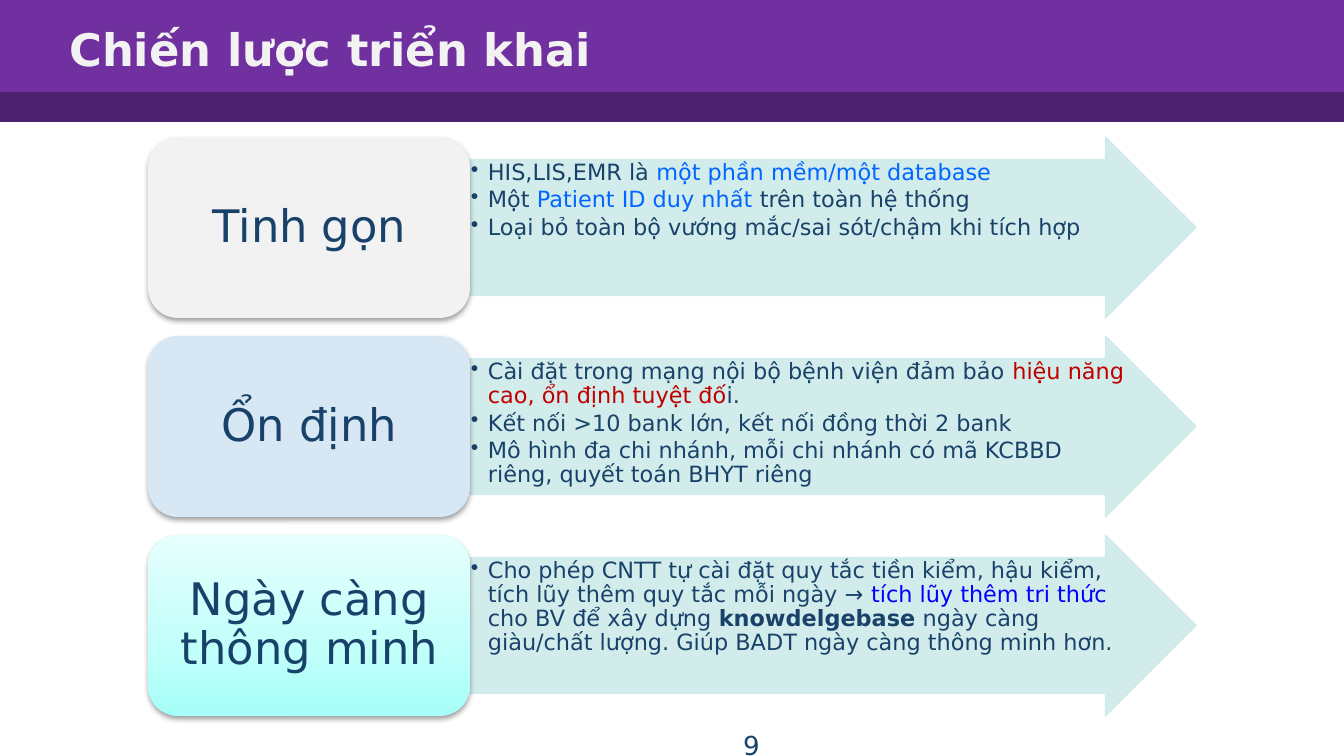
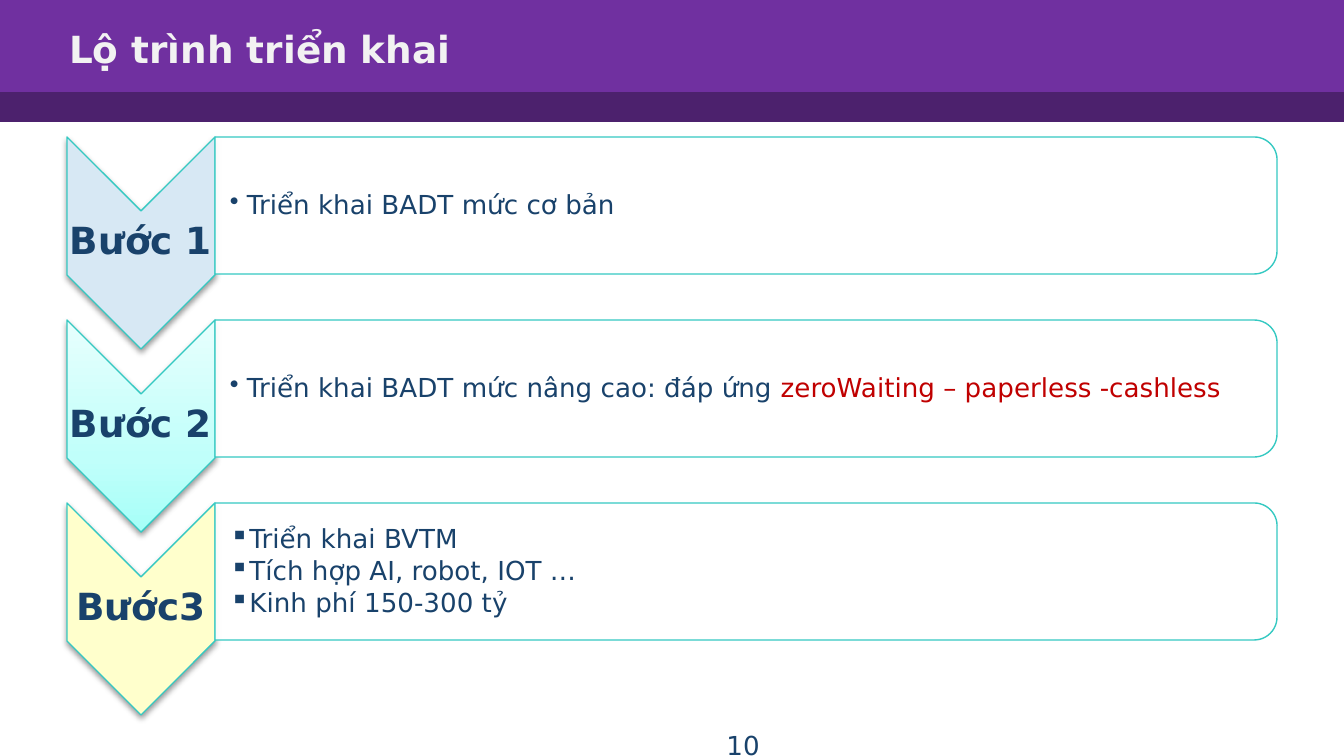
from lxml import etree
from pptx import Presentation
from pptx.dml.color import RGBColor
from pptx.enum.shapes import MSO_SHAPE as SHAPE
from pptx.enum.text import MSO_ANCHOR as ANCHOR, PP_ALIGN as ALIGN
from pptx.oxml import parse_xml
from pptx.oxml.ns import nsdecls, qn
from pptx.util import Pt

PX = 914400 / 134.4  # EMU in one px
FONT = "DejaVu Sans"
C = {
    "band": "7030A0", "band_dark": "4C216D", "title": "F2F2F2",
    "text": "19426B", "arrow": "CEEBE9", "teal": "35C9C2", "white": "FFFFFF",
    "grey": "F2F2F2", "sky": "D7E8F4", "cream": "FFFFCC",
    "azure": "0066FF", "blue": "0000FF", "red": "C00000",
}
AQUA = [(0, "A6FFF8"), (35, "C0FFFA"), (100, "E7FFFD")]  # gradient, bottom to top


def add_shape(s, kind, box, fill, line=None, fill_alpha=None, line_alpha=None,
              shadow=False, turned=False):
    """Draw a preset shape in the box it covers on the slide; turned means a quarter turn."""
    x, y, w, h = box
    if turned:
        x, y, w, h = x + (w - h) / 2, y + (h - w) / 2, h, w
    sp = s.shapes.add_shape(kind, *[round(v * PX) for v in (x, y, w, h)])
    sp.rotation = 90 if turned else 0
    if isinstance(fill, list):
        sp.fill.background()
        stops = "".join(f'<a:gs pos="{pos * 1000}"><a:srgbClr val="{color}"/></a:gs>'
                        for pos, color in fill)
        no_fill = sp._element.spPr.find(qn("a:noFill"))
        no_fill.getparent().replace(no_fill, parse_xml(
            f'<a:gradFill {nsdecls("a")} rotWithShape="0"><a:gsLst>{stops}</a:gsLst>'
            '<a:lin ang="16200000" scaled="0"/></a:gradFill>'))
    else:
        sp.fill.solid()
        sp.fill.fore_color.rgb = RGBColor.from_string(fill)
    if line:
        sp.line.color.rgb = RGBColor.from_string(line)
        sp.line.width = Pt(0.75)
    else:
        sp.line.fill.background()
    for tag, alpha in (("a:solidFill", fill_alpha), ("a:ln/a:solidFill", line_alpha)):
        if alpha:
            path = "/".join(qn(t) for t in f"{tag}/a:srgbClr".split("/"))
            color = sp._element.spPr.find(path)
            etree.SubElement(color, qn("a:alpha"), val=str(alpha * 1000))
    sp.shadow.inherit = False
    if shadow:
        sp._element.spPr.find(qn("a:effectLst")).append(parse_xml(
            f'<a:outerShdw {nsdecls("a")} blurRad="40000" dist="20000" dir="5400000" '
            'rotWithShape="0"><a:srgbClr val="000000"><a:alpha val="38000"/>'
            '</a:srgbClr></a:outerShdw>'))
    return sp


def add_text(s, box, paragraphs, size, color=C["text"], bold=False, align=ALIGN.LEFT,
             anchor=ANCHOR.MIDDLE, insets=None, bullet=None, spacing=None, after=0):
    """Each paragraph is a list of runs: (text, colour or None, bold or None)."""
    tf = s.shapes.add_textbox(*[round(v * PX) for v in box]).text_frame
    tf.word_wrap = True
    tf.vertical_anchor = anchor
    if insets:
        tf.margin_left, tf.margin_top, tf.margin_right, tf.margin_bottom = [
            round(v * PX) for v in insets]
    for i, runs in enumerate(paragraphs):
        p = tf.paragraphs[0] if i == 0 else tf.add_paragraph()
        p.alignment = align
        if spacing:
            p.line_spacing = spacing
            p.space_after = Pt(size * after)
        if bullet:
            p.level = 1
            pPr = p._p.get_or_add_pPr()
            indent = round(17 * PX)
            pPr.set("marL", str(indent))
            pPr.set("indent", str(-indent))
            etree.SubElement(pPr, qn("a:buChar"), char=bullet)
        for text, run_color, run_bold in runs:
            r = p.add_run()
            r.text = text
            r.font.name = FONT
            r.font.size = Pt(size)
            r.font.bold = bold if run_bold is None else run_bold
            r.font.color.rgb = RGBColor.from_string(run_color or color)


prs = Presentation()
prs.slide_width, prs.slide_height = round(1344 * PX), round(756 * PX)

# Bands, title and page number on both slides
slides = []
for title, title_size, number in (("Chiến lược triển khai", 24, "9"),
                                  ("Lộ trình triển khai", 20, "10")):
    s = prs.slides.add_slide(prs.slide_layouts[6])
    add_shape(s, SHAPE.RECTANGLE, (0, 87, 1344, 35), C["band_dark"])
    add_shape(s, SHAPE.RECTANGLE, (0, 0, 1344, 92), C["band"])
    add_text(s, (56, 18, 1086, 62), [[(title, None, None)]], title_size,
             color=C["title"], bold=True)
    add_text(s, (460, 723, 313, 26), [[(number, None, None)]], 14,
             align=ALIGN.RIGHT, anchor=ANCHOR.TOP)
    slides.append(s)
strategy, roadmap = slides

# Strategy: a label and an arrow of details in each row
goals = [
    ("Tinh gọn", C["grey"], [
        [("HIS,LIS,EMR là ", None, None),
         ("một phần mềm/một database", C["azure"], None)],
        [("Một ", None, None), ("Patient ID duy nhất ", C["azure"], None),
         ("trên toàn hệ thống", None, None)],
        [("Loại bỏ toàn bộ vướng mắc/sai sót/chậm khi tích hợp", None, None)],
    ]),
    ("Ổn định", C["sky"], [
        [("Cài đặt trong mạng nội bộ bệnh viện đảm bảo ", None, None),
         ("hiệu năng cao, ổn định tuyệt đố", C["red"], None), ("i.", None, None)],
        [("Kết nối >10 bank lớn, kết nối đồng thời 2 bank", None, None)],
        [("Mô hình đa chi nhánh, mỗi chi nhánh có mã KCBBD riêng, "
          "quyết toán BHYT riêng", None, None)],
    ]),
    ("Ngày càng thông minh", AQUA, [
        [("Cho phép CNTT tự cài đặt quy tắc tiền kiểm, hậu kiểm, "
          "tích lũy thêm quy tắc mỗi ngày → ", None, None),
         ("tích lũy thêm tri thức ", C["blue"], None),
         ("cho BV để xây dựng ", None, None), ("knowdelgebase", None, True),
         (" ngày càng giàu/chất lượng. Giúp BADT ngày càng thông minh hơn.", None, None)],
    ]),
]
for row, (label, fill, details) in enumerate(goals):
    y = 137 + row * 199
    arrow = add_shape(strategy, SHAPE.RIGHT_ARROW, (470, y, 726, 181), C["arrow"],
                      line=C["arrow"], fill_alpha=90, line_alpha=90)
    arrow.adjustments[0], arrow.adjustments[1] = 0.75, 0.5
    add_text(strategy, (470, y + 23, 659, 136), details, 12, anchor=ANCHOR.TOP,
             insets=(1, 1, 1, 1), bullet="•", spacing=0.9, after=0.15)
    add_shape(strategy, SHAPE.ROUNDED_RECTANGLE, (148, y, 322, 181), fill, shadow=True)
    add_text(strategy, (157, y + 9, 305, 163), [[(label, None, None)]], 24,
             align=ALIGN.CENTER, spacing=0.9, after=0.35)

# Roadmap: a chevron and a panel for each step
steps = [
    ("Bước 1", C["sky"], "•", [[("Triển khai BADT mức cơ bản", None, None)]]),
    ("Bước 2", AQUA, "•", [
        [("Triển khai BADT mức nâng cao: đáp ứng ", None, None),
         ("zeroWaiting – paperless -cashless", C["red"], None)],
    ]),
    ("Bước3", C["cream"], "▪", [
        [("Triển khai BVTM", None, None)],
        [("Tích hợp AI, robot, IOT …", None, None)],
        [("Kinh phí 150-300 tỷ", None, None)],
    ]),
]
for row, (label, fill, bullet, details) in enumerate(steps):
    y = 137 + row * 183
    add_shape(roadmap, SHAPE.CHEVRON, (67, y, 148, 212), fill, line=C["teal"],
              shadow=True, turned=True)
    add_text(roadmap, (67, y + 74, 148, 63), [[(label, None, None)]], 20, bold=True,
             align=ALIGN.CENTER, insets=(1, 1, 1, 1), spacing=0.9, after=0.35)
    add_shape(roadmap, SHAPE.ROUND_2_SAME_RECTANGLE, (215, y, 1062, 137), C["white"],
              line=C["teal"], fill_alpha=90, turned=True)
    add_text(roadmap, (215, y + 7, 1055, 124), details, 14, insets=(15, 1, 1, 1),
             bullet=bullet, spacing=0.9, after=0.15)

prs.save("out.pptx")
